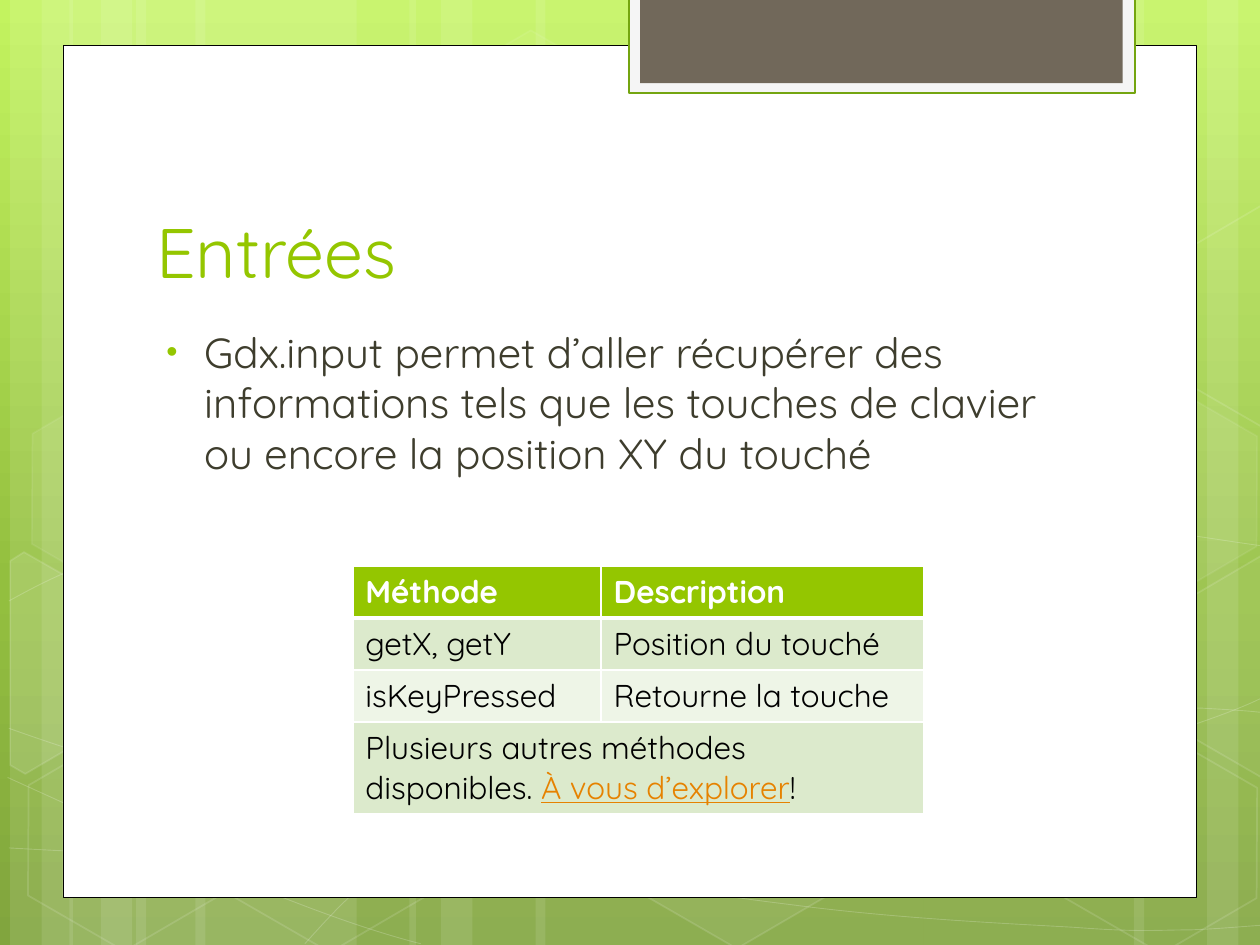
from math import cos, radians, sin

from lxml.etree import SubElement
from pptx import Presentation
from pptx.dml.color import RGBColor
from pptx.enum.shapes import MSO_SHAPE
from pptx.enum.text import MSO_ANCHOR, MSO_AUTO_SIZE, PP_ALIGN
from pptx.oxml.ns import qn
from pptx.util import Inches, Pt

COLORS = {
    "sky": "C3F35F", "leaf": "93BF3F", "moss": "81A53E", "white": "FFFFFF",
    "black": "000000", "tab": "F5F5F5", "tab_edge": "74A510", "stone": "71685A",
    "accent": "94C600", "body": "3E3D2D", "link": "E68200",
    "band_dark": "DCEACC", "band_light": "EEF5E7",
}
FONT = "Quicksand"
TILT = 30

STRIPES = [  # left, width
    (1.08, 1.75), (0.08, 0.5), (0.33, 0.83), (1.55, 1.75), (0.55, 0.5), (0.8, 0.83),
    (7.33, 1.75), (9.58, 0.5), (9, 0.83), (4.25, 3.08), (3.25, 0.5), (3.5, 0.83),
]
WAVES = [  # start point, then triples of Bezier control points
    [(0.07, 6.73), (0.61, 6.76), (1.15, 6.79), (1.9, 6.78), (2.65, 6.77), (3.58, 6.75),
     (4.58, 6.65), (5.58, 6.55), (7, 6.36), (7.92, 6.17), (8.83, 5.98), (9.77, 5.68),
     (10.07, 5.51)],
    [(0.07, 4.77), (0.36, 4.61), (0.65, 4.46), (1.21, 4.31), (1.78, 4.16), (2.59, 3.94),
     (3.47, 3.87), (4.36, 3.8), (5.44, 3.79), (6.54, 3.87), (7.64, 3.95), (9.47, 4.26),
     (10.07, 4.34)],
    [(0.06, 6.17), (1.27, 6.72), (2.47, 7.27), (3.34, 7.49)],
    [(0.07, 5.78), (0.38, 5.89), (0.7, 6), (1.28, 6.16), (1.86, 6.31), (2.73, 6.56),
     (3.57, 6.73), (4.4, 6.9), (5.45, 7.08), (6.28, 7.18), (7.11, 7.29), (8, 7.33),
     (8.53, 7.36), (9.05, 7.4), (9.19, 7.38), (9.45, 7.38), (9.71, 7.37), (9.89, 7.35),
     (10.07, 7.34)],
    [(2.42, 7.49), (2.6, 7.29), (2.78, 7.09), (3.02, 6.91), (3.26, 6.73), (3.6, 6.53),
     (3.88, 6.39), (4.16, 6.25), (4.33, 6.19), (4.7, 6.09), (5.06, 5.99), (5.73, 5.85),
     (6.08, 5.78), (6.44, 5.71), (6.49, 5.71), (6.8, 5.69), (7.11, 5.66), (7.6, 5.63),
     (7.94, 5.62), (8.29, 5.61), (8.86, 5.62), (8.86, 5.62), (8.86, 5.62), (9.53, 5.62),
     (9.53, 5.62), (9.71, 5.63), (9.88, 5.64), (9.97, 5.65), (10.06, 5.66), (10.03, 5.65),
     (10.06, 5.66)],
]
HEXAGONS = [  # left, top, fill opacity, line opacity
    (3.34, 0.36, 4, 8), (4.97, 5.89, 6, 12), (0.11, 5.91, 0, 12), (0.14, 3.12, 7, 8),
    (1.74, 5.92, 0, 12), (7.53, 4.53, 10, 12), (8.34, 5.93, 0, 12), (8.34, 3.14, 7, 8),
]
CUT_HEXAGONS = [  # centre, corner points, fill opacity
    ((0.36, 5.35), [(0.08, 4.45), (0.19, 4.38), (0.96, 4.82), (0.95, 5.7), (0.2, 6.14),
                    (0.08, 6.07)], 10),
    ((9.85, 5.2), [(9.26, 4.85), (10.01, 4.41), (10.09, 4.46), (10.09, 6.13), (10.02, 6.17),
                   (9.26, 5.73)], 4),
    ((9.85, 2.41), [(9.26, 2.07), (10.01, 1.63), (10.1, 1.68), (10.09, 3.35), (10.02, 3.39),
                    (9.26, 2.95)], 0),
]
METHODS = [("Méthode", "Description"), ("getX, getY", "Position du touché"),
           ("isKeyPressed", "Retourne la touche")]
CLOSING = [("Plusieurs autres méthodes disponibles. ", "black", False),
           ("À vous d’explorer", "link", True), ("!", "black", False)]


def rgb(name):
    return RGBColor.from_string(COLORS[name])


def set_values(target, values):
    for attribute, value in values.items():
        setattr(target, attribute, value)


def box_values(left, top, width, height):
    return {"left": Inches(left), "top": Inches(top),
            "width": Inches(width), "height": Inches(height)}


def paint(fill, color, opacity=100):
    """Fill in one colour; an opacity of 0 leaves no fill."""
    if not opacity:
        fill.background()
        return
    fill.solid()
    fill.fore_color.rgb = rgb(color)


def style(shape, fill="white", opacity=100, line=None, width=1, line_opacity=100):
    shape.shadow.inherit = False
    paint(shape.fill, fill, opacity)
    if line:
        paint(shape.line.fill, line)
        shape.line.width = Pt(width)
    else:
        shape.line.fill.background()
    properties = shape.element.spPr
    outline = properties.find(qn("a:ln"))
    for parent, percent in ((properties, opacity), (outline, line_opacity)):
        color = parent.find(qn("a:solidFill") + "/" + qn("a:srgbClr"))
        if color is not None and percent < 100:
            SubElement(color, qn("a:alpha"), val=str(percent * 1000))


def add_box(shapes, box, kind=MSO_SHAPE.RECTANGLE, **look):
    shape = shapes.add_shape(kind, **box_values(*box))
    style(shape, **look)
    return shape


def add_outline(shapes, points, close, **look):
    corners = [(Inches(x), Inches(y)) for x, y in points]
    builder = shapes.build_freeform(*corners[0])
    builder.add_line_segments(corners[1:], close=close)
    outline = builder.convert_to_shape()
    style(outline, **look)
    return outline


def bend(outline):
    """Turn each three line segments of an outline into one Bezier curve."""
    segments = list(outline.element.iter(qn("a:lnTo")))
    for first in range(0, len(segments), 3):
        curve = SubElement(segments[first].getparent(), qn("a:cubicBezTo"))
        for segment in segments[first:first + 3]:
            curve.append(segment[0])
            segment.getparent().remove(segment)


def turn(point, center, degrees):
    angle = radians(degrees)
    x, y = point[0] - center[0], point[1] - center[1]
    return (center[0] + x * cos(angle) - y * sin(angle),
            center[1] + x * sin(angle) + y * cos(angle))


def add_backdrop(slide, height):
    fill = slide.background.fill
    fill.gradient()
    fill.gradient_angle = 270
    stops = slide.element.find(".//" + qn("a:gsLst"))
    stops.clear()
    for position, color in ((0, "sky"), (62, "leaf"), (100, "moss")):
        stop = SubElement(stops, qn("a:gs"), pos=str(position * 1000))
        SubElement(stop, qn("a:srgbClr"), val=COLORS[color])

    shapes = slide.shapes
    for left, width in STRIPES:
        add_box(shapes, (left, 0, width, height), opacity=10)
    for controls in WAVES:
        bend(add_outline(shapes, controls, False, opacity=0,
                         line="white", width=0.5, line_opacity=20))
    for left, top, opacity, line_opacity in HEXAGONS:
        hexagon = add_box(shapes, (left, top, 1.75, 1.52), MSO_SHAPE.HEXAGON,
                          opacity=opacity, line="white", line_opacity=line_opacity)
        hexagon.rotation = TILT
        hexagon.adjustments[0] = 0.285
    for center, corners, opacity in CUT_HEXAGONS:
        upright = [turn(corner, center, -TILT) for corner in corners]
        add_outline(shapes, upright, True, opacity=opacity, line="white",
                    line_opacity=12).rotation = TILT


def add_panel(shapes, left, top, width, height):
    add_box(shapes, (left, top, width, height), line="black", width=0.5)
    add_box(shapes, (left + 4.49, -0.02, 4.02, 0.76), fill="tab", line="tab_edge", width=1.25)
    add_box(shapes, (left + 4.58, -0.02, 3.83, 0.68), fill="stone")


def write_run(paragraph, text, size, color, **extra):
    run = paragraph.add_run()
    run.text = text
    set_values(run.font, {"name": FONT, "size": Pt(size), **extra})
    run.font.color.rgb = rgb(color)


def place_text(placeholder, box, text, size, color, anchor):
    """Move a placeholder in front of the panel and write its one paragraph."""
    placeholder.element.getparent().append(placeholder.element)
    set_values(placeholder, box_values(*box))
    set_values(placeholder.text_frame, {"word_wrap": True, "vertical_anchor": anchor,
                                        "auto_size": MSO_AUTO_SIZE.NONE})
    paragraph = placeholder.text_frame.paragraphs[0]
    paragraph.alignment = PP_ALIGN.LEFT
    write_run(paragraph, text, size, color)
    return paragraph


def add_bullet(paragraph):
    paragraph.space_before = Pt(4.8)
    properties = paragraph._p.get_or_add_pPr()
    properties.set("marL", str(Inches(0.38)))
    properties.set("indent", str(Inches(-0.3)))
    SubElement(SubElement(properties, qn("a:buClr")), qn("a:srgbClr"), val=COLORS["accent"])
    SubElement(properties, qn("a:buSzPct"), val="76000")
    SubElement(properties, qn("a:buFont"), typeface="Arial")
    SubElement(properties, qn("a:buChar"), char="•")


def format_cell(cell, fill, bottom_width):
    properties = cell._tc.get_or_add_tcPr()
    for side, width in (("L", 1), ("R", 1), ("T", 1), ("B", bottom_width)):
        border = SubElement(properties, qn("a:ln" + side), w=str(Pt(width)))
        SubElement(SubElement(border, qn("a:solidFill")), qn("a:srgbClr"), val=COLORS["white"])
    paint(cell.fill, fill)


def add_methods_table(shapes, left, top, width, height):
    table = shapes.add_table(len(METHODS) + 1, 2, **box_values(left, top, width, height)).table
    for column, share in zip(table.columns, (1.97, 2.56)):
        column.width = Inches(share)
    for row, row_height in zip(table.rows, (0.41, 0.41, 0.41, 0.71)):
        row.height = Inches(row_height)
    for row, fill in enumerate(("accent", "band_dark", "band_light", "band_dark")):
        for cell in table.rows[row].cells:
            format_cell(cell, fill, 1 if row else 3)
    for row, texts in enumerate(METHODS):
        for column, text in enumerate(texts):
            write_run(table.cell(row, column).text_frame.paragraphs[0], text, 18,
                      "black" if row else "white", bold=row == 0)
    closing = table.cell(len(METHODS), 0)
    closing.merge(table.cell(len(METHODS), 1))
    for text, color, underline in CLOSING:
        write_run(closing.text_frame.paragraphs[0], text, 18, color,
                  bold=False, underline=underline)


def main():
    deck = Presentation()
    set_values(deck, {"slide_width": Inches(10), "slide_height": Inches(7.5)})
    slide = deck.slides.add_slide(deck.slide_layouts[1])
    add_backdrop(slide, 7.5)
    add_panel(slide.shapes, 0.5, 0.36, 9, 6.76)
    place_text(slide.shapes.title, (1.14, 1.12, 7.68, 1.25), "Entrées", 40, "accent",
               MSO_ANCHOR.BOTTOM)
    add_bullet(place_text(
        slide.placeholders[1], (1.14, 2.54, 7.41, 3.84),
        "Gdx.input permet d’aller récupérer des informations tels que les touches de clavier "
        "ou encore la position XY du touché", 24, "body", MSO_ANCHOR.TOP))
    add_methods_table(slide.shapes, 2.8, 4.49, 4.53, 1.94)
    deck.save("out.pptx")


if __name__ == "__main__":
    main()
